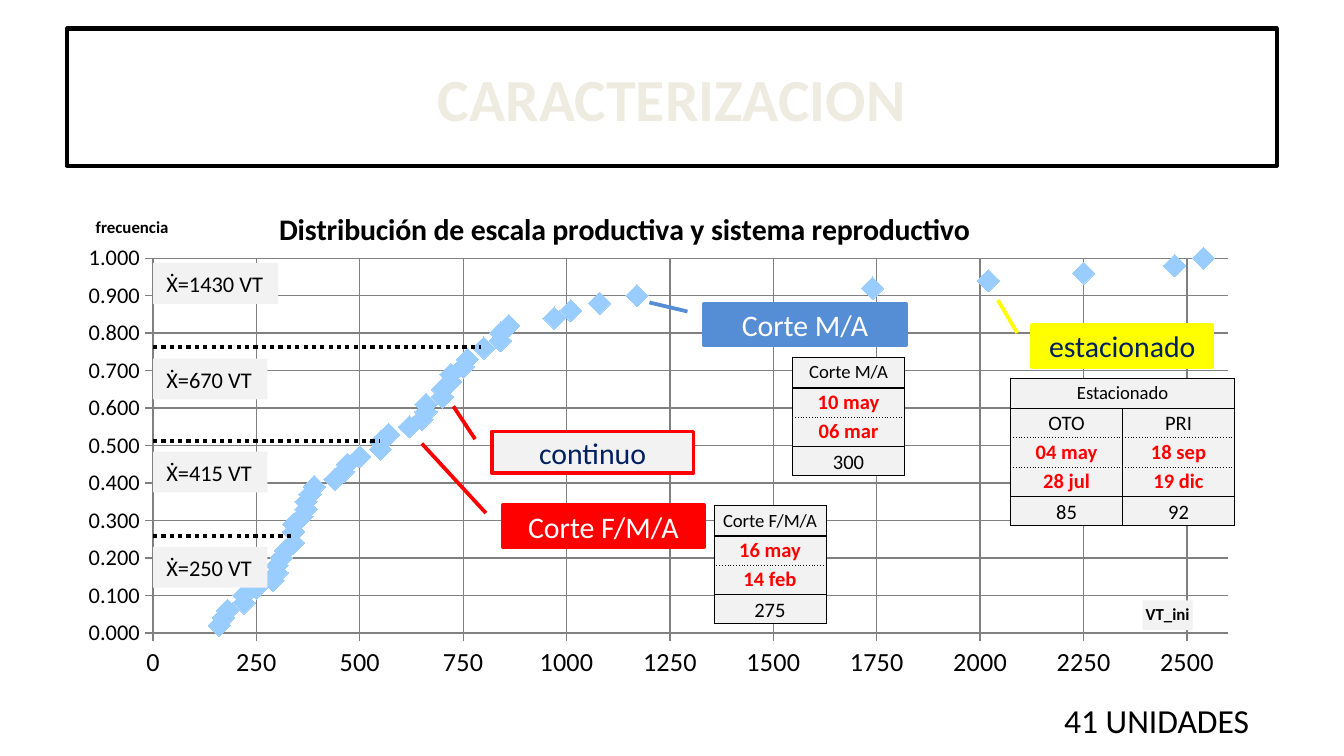
from lxml import etree
from pptx import Presentation
from pptx.chart.data import XyChartData
from pptx.dml.color import RGBColor
from pptx.enum import chart as ch, dml, shapes, text
from pptx.oxml.ns import qn
from pptx.util import Pt

BLACK = RGBColor(0, 0, 0)
WHITE = RGBColor(255, 255, 255)
CREAM = RGBColor(0xEE, 0xEC, 0xE1)
PALE = RGBColor(0xF2, 0xF2, 0xF2)
GRAY = RGBColor(0x80, 0x80, 0x80)
RED = RGBColor(255, 0, 0)
YELLOW = RGBColor(255, 255, 0)
NAVY = RGBColor(0, 0x20, 0x60)
BLUE = RGBColor(0x55, 0x8E, 0xD5)
SKY = RGBColor(0x99, 0xCC, 0xFF)
FONT = "Calibri"
MID = text.PP_ALIGN.CENTER

HERDS = [
    160, 170, 180, 220, 220, 250, 290, 300, 300, 310, 320, 340, 340, 340,
    360, 370, 370, 380, 390, 440, 460, 470, 500, 550, 550, 570, 620, 650,
    660, 660, 700, 700, 720, 720, 750, 760, 800, 840, 840, 860, 970, 1010,
    1080, 1170, 1740, 2020, 2250, 2470, 2540]


def style(font, size, color=BLACK, bold=False):
    font.name, font.size, font.bold = FONT, Pt(size), bold
    font.color.rgb = color


def write(frame, words, size=12, color=BLACK, bold=False, align=None):
    para = frame.paragraphs[0]
    para.alignment = align
    run = para.add_run()
    run.text = words
    style(run.font, size, color, bold)


def place(node, index, x, y, w=None, h=None):
    """Give a chart part a manual layout, in fractions of the chart."""
    lay = node.find(qn("c:layout"))
    if lay is None:
        lay = etree.Element(qn("c:layout"))
        node.insert(index, lay)
    man = etree.SubElement(lay, qn("c:manualLayout"))
    parts = [("xMode", "edge"), ("yMode", "edge"), ("x", x), ("y", y)]
    if w:
        parts = [("layoutTarget", "inner")] + parts + [("w", w), ("h", h)]
    for tag, val in parts:
        etree.SubElement(man, qn("c:" + tag)).set("val", str(val))


def head(title, words, size, x, y):
    write(title.text_frame, words, size, bold=True)
    place(title._element, 1, x, y)


def set_axis(axis, top, step, size, form):
    axis.minimum_scale, axis.maximum_scale = 0, top
    axis.major_unit = step
    axis.has_major_gridlines = True
    for line in (axis.format.line, axis.major_gridlines.format.line):
        line.color.rgb = GRAY
        line.width = Pt(0.75)
    axis.major_tick_mark = ch.XL_TICK_MARK.CROSS
    axis.tick_labels.number_format = form
    axis.tick_labels.number_format_is_linked = False
    style(axis.tick_labels.font, size)


def paint(marker, color):
    marker.style = ch.XL_MARKER_STYLE.DIAMOND
    marker.size = 12
    marker.format.fill.solid()
    marker.format.fill.fore_color.rgb = color
    marker.format.line.fill.background()


def add_plot(slide):
    data = XyChartData()
    pairs = data.add_series("Frecuencia")
    for i, herd in enumerate(HERDS, 1):
        pairs.add_data_point(herd, round(i / len(HERDS), 2))
    chart = slide.shapes.add_chart(
        ch.XL_CHART_TYPE.XY_SCATTER, Pt(36.7), Pt(95), Pt(646.6), Pt(276.5),
        data).chart
    style(chart.font, 10)
    chart.has_legend = False
    head(chart.chart_title, "Distribución de escala productiva y sistema "
         "reproductivo", 16, 0.17, 0.05)
    across, up = chart.category_axis, chart.value_axis
    set_axis(across, 2600, 250, 14, "0")
    set_axis(up, 1, 0.1, 12, "0.000")
    head(across.axis_title, "VT_ini", 9, 0.89, 0.82)
    across.axis_title.format.fill.solid()
    across.axis_title.format.fill.fore_color.rgb = PALE
    head(up.axis_title, "frecuencia", 9, 0.02, 0.07)
    body = up.axis_title.text_frame._txBody.bodyPr
    body.set("rot", "0")
    body.set("vert", "horz")
    place(chart._chartSpace.chart.plotArea, 0, 0.07, 0.157, 0.891, 0.726)
    plot = chart.plots[0]
    plot.vary_by_categories = False
    series = plot.series[0]
    series.smooth = False
    series.format.line.fill.background()
    paint(series.marker, SKY)
    for i in (1, 9):
        paint(series.points[i].marker, RED)


def add_box(slide, kind, x, y, w, h, fill=None, edge=None, wide=2):
    box = slide.shapes.add_shape(kind, Pt(x), Pt(y), Pt(w), Pt(h))
    box.shadow.inherit = False
    if fill is None:
        box.fill.background()
    else:
        box.fill.solid()
        box.fill.fore_color.rgb = fill
    if edge is None:
        box.line.fill.background()
    else:
        box.line.color.rgb = edge
        box.line.width = Pt(wide)
    box.text_frame.vertical_anchor = text.MSO_ANCHOR.MIDDLE
    return box


def add_call(slide, words, x, y, w, tip, fill, edge, color):
    """Callout whose leader ends at tip (down, across) in box sizes."""
    box = add_box(slide, shapes.MSO_SHAPE.LINE_CALLOUT_1, x, y, w, 22.3,
                  fill, edge)
    for i, val in enumerate((0.188, -0.083) + tip):
        box.adjustments[i] = val
    write(box.text_frame, words, 16, color, align=MID)


def add_mean(slide, words, y, w):
    box = add_box(slide, shapes.MSO_SHAPE.RECTANGLE, 82, y, w, 21.8, PALE)
    box.text_frame.word_wrap = False
    write(box.text_frame, words, align=text.PP_ALIGN.LEFT)


def add_dots(slide, y, end):
    line = slide.shapes.add_connector(
        shapes.MSO_CONNECTOR.STRAIGHT, Pt(82), Pt(y), Pt(end), Pt(y))
    line.line.color.rgb = BLACK
    line.line.width = Pt(2.25)
    line.line.dash_style = dml.MSO_LINE.ROUND_DOT
    etree.SubElement(line._element.spPr, qn("a:effectLst"))


def rule(cell, side, wide=0.5, dash="solid"):
    line = etree.SubElement(cell._tc.get_or_add_tcPr(), qn("a:ln" + side))
    line.set("w", str(Pt(wide)))
    fill = etree.SubElement(line, qn("a:solidFill"))
    etree.SubElement(fill, qn("a:srgbClr")).set("val", str(BLACK))
    etree.SubElement(line, qn("a:prstDash")).set("val", dash)


def add_dates(slide, x, y, rows, dots, bold=None):
    """Table of dates; dots and bold name the edges (0 is the top one)."""
    last, cols = len(rows) - 1, len(rows[-1])
    grid = slide.shapes.add_table(
        len(rows), cols, Pt(x), Pt(y), Pt(60 * cols),
        Pt(16.5 + 15.6 * last)).table
    for col in grid.columns:
        col.width = Pt(60)
    for r, row in enumerate(rows):
        grid.rows[r].height = Pt(15.6 if r else 16.5)
        for c in range(cols):
            cell = grid.cell(r, c)
            cell.margin_left = cell.margin_right = 0
            cell.margin_top = cell.margin_bottom = 0
            cell.vertical_anchor = (text.MSO_ANCHOR.BOTTOM if r == last
                                    else text.MSO_ANCHOR.MIDDLE)
            for side, edge in (("L", 0), ("R", 0), ("T", r), ("B", r + 1)):
                rule(cell, side, 1 if edge and edge == bold else 0.5,
                     "dot" if edge in dots else "solid")
            cell.fill.solid()
            cell.fill.fore_color.rgb = PALE
            if c < len(row):
                date = last - 2 <= r < last
                write(cell.text_frame, row[c], 11 if r else 10,
                      RED if date else BLACK, date, MID)
    if len(rows[0]) < cols:
        grid.cell(0, 0).merge(grid.cell(0, cols - 1))


def main():
    deck = Presentation()
    deck.slide_width, deck.slide_height = Pt(720), Pt(405)
    slide = deck.slides.add_slide(deck.slide_layouts[6])
    add_plot(slide)
    for call in (
            ("estacionado", 553, 174.2, 96.5, (-0.604, -0.191),
             YELLOW, YELLOW, NAVY),
            ("continuo", 263.5, 231.1, 108, (-0.604, -0.191),
             PALE, RED, NAVY),
            ("Corte F/M/A", 269.3, 270.7, 108, (-1.484, -0.401),
             RED, RED, WHITE),
            ("Corte M/A", 377.3, 162.7, 108, (-0.03, -0.272),
             BLUE, BLUE, WHITE)):
        add_call(slide, *call)
    add_dates(slide, 541.4, 202.5, [
        ["Estacionado"], ["OTO", "PRI"], ["04 may", "18 sep"],
        ["28 jul", "19 dic"], ["85", "92"]], (2, 3))
    add_dates(slide, 382.5, 270.7,
              [["Corte F/M/A"], ["16 may"], ["14 feb"], ["275"]], (2,), 1)
    add_dates(slide, 424.6, 191.3,
              [["Corte M/A"], ["10 may"], ["06 mar"], ["300"]], (2,), 1)
    note = slide.shapes.add_textbox(Pt(563), Pt(371.5), Pt(114.5), Pt(29))
    note.text_frame.word_wrap = False
    write(note.text_frame, "41 UNIDADES", 18)
    title = add_box(slide, shapes.MSO_SHAPE.RECTANGLE, 36, 15.3, 648, 73.5,
                    edge=BLACK, wide=2.25)
    write(title.text_frame, "CARACTERIZACION", 32, CREAM, True, MID)
    for y, end in ((287.3, 156.2), (236.2, 203.8), (185.8, 257.8)):
        add_dots(slide, y, end)
    for words, y, w in (("Ẋ=250 VT", 293, 61.2), ("Ẋ=415 VT", 242, 61.2),
                        ("Ẋ=670 VT", 192.2, 61.2), ("Ẋ=1430 VT", 141, 67)):
        add_mean(slide, words, y, w)
    deck.save("out.pptx")


if __name__ == "__main__":
    main()
